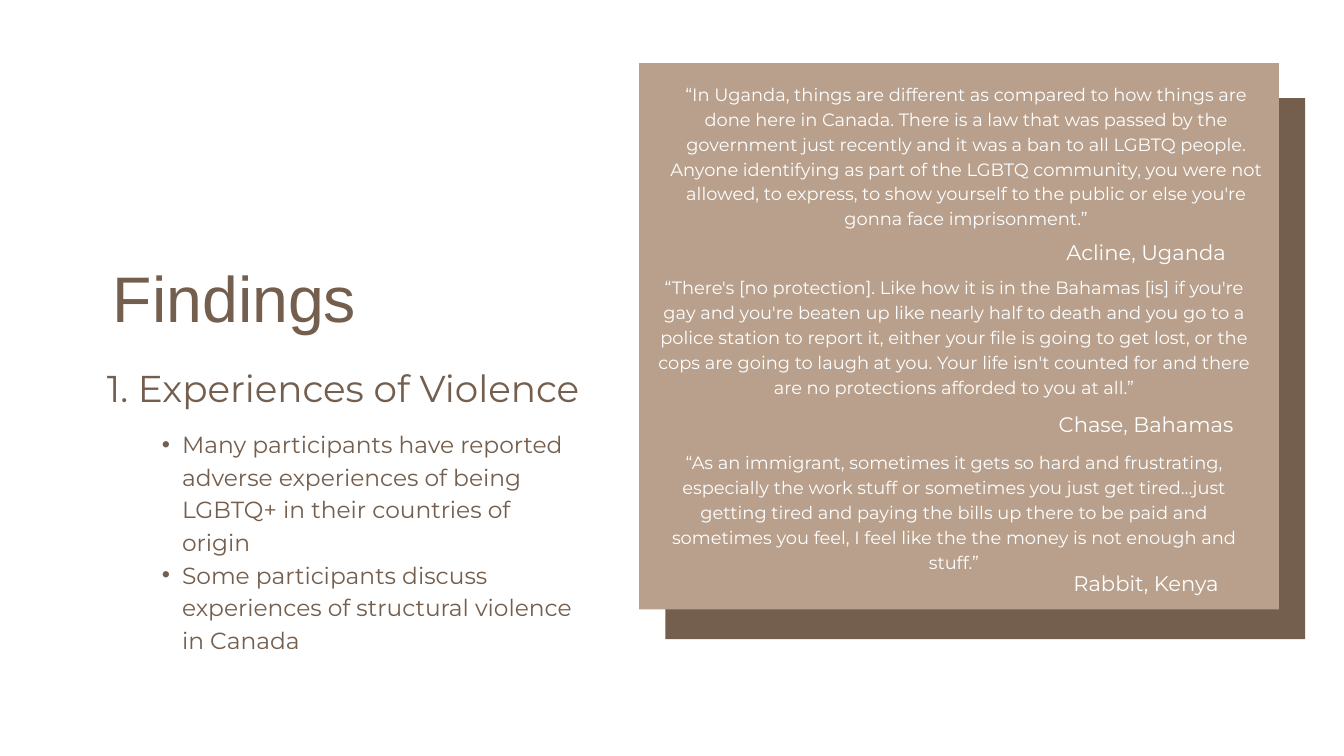
import pptx
import pptx.dml.color
import pptx.enum.shapes
import pptx.enum.text
import pptx.oxml
import pptx.oxml.ns
import pptx.util
from pptx.util import Inches

BROWN = "745E4D"
TAN = "B8A08C"
WHITE = "FFFFFF"
LEFT = pptx.enum.text.PP_ALIGN.LEFT
CENTER = pptx.enum.text.PP_ALIGN.CENTER

FINDINGS = [
    "Many participants have reported adverse experiences of being LGBTQ+ in their countries of origin",
    "Some participants discuss experiences of structural violence in Canada",
]

# Quote left, top and height, quote, speaker top, speaker
QUOTES = [
    (9.87, 1.19, 2.17,
     "“In Uganda, things are different as compared to how things are done here in Canada. "
     "There is a law that was passed by the government just recently and it was a ban to all "
     "LGBTQ people. Anyone identifying as part of the LGBTQ community, you were not allowed, "
     "to express, to show yourself to the public or else you're gonna face imprisonment.”",
     3.5, "Acline, Uganda"),
    (9.69, 4.07, 1.81,
     "“There's [no protection]. Like how it is in the Bahamas [is] if you're gay and you're "
     "beaten up like nearly half to death and you go to a police station to report it, either "
     "your file is going to get lost, or the cops are going to laugh at you. Your life isn't "
     "counted for and there are no protections afforded to you at all.”",
     6.06, "Chase, Bahamas"),
    (9.69, 6.67, 1.81,
     "“As an immigrant, sometimes it gets so hard and frustrating, especially the work stuff "
     "or sometimes you just get tired…just getting tired and paying the bills up there to be "
     "paid and sometimes you feel, I feel like the the money is not enough and stuff.”",
     8.43, "Rabbit, Kenya"),
]


def color(value):
    return pptx.dml.color.RGBColor.from_string(value)


def place(shape, left, top, width, height):
    shape.left, shape.top = Inches(left), Inches(top)
    shape.width, shape.height = Inches(width), Inches(height)


def format_text(shape, size, line_spacing, text_color, font="Montserrat", alignment=LEFT):
    """Remove the margins and give every paragraph the same look."""
    frame = shape.text_frame
    frame.word_wrap = True
    frame.auto_size = pptx.enum.text.MSO_AUTO_SIZE.NONE
    frame.vertical_anchor = pptx.enum.text.MSO_ANCHOR.TOP
    frame.margin_left = frame.margin_top = frame.margin_right = frame.margin_bottom = 0
    for paragraph in frame.paragraphs:
        paragraph.alignment = alignment
        paragraph.line_spacing = pptx.util.Pt(line_spacing)
        for run in paragraph.runs:
            run.font.size = pptx.util.Pt(size)
            run.font.name = font
            run.font.color.rgb = color(text_color)


def add_text(slide, box, text, size, line_spacing, text_color, alignment=LEFT):
    shape = slide.shapes.add_textbox(*map(Inches, box))
    shape.text_frame.text = text
    format_text(shape, size, line_spacing, text_color, alignment=alignment)
    return shape


def indent(shape, margin, first_line=0, bullet=None):
    """Set a second-level indent, with a bullet if one is given."""
    for paragraph in shape.text_frame.paragraphs:
        paragraph.level = 1
        properties = paragraph._p.get_or_add_pPr()
        properties.set("marL", str(Inches(margin)))
        properties.set("indent", str(Inches(first_line)))
        if bullet:
            for tag, name, value in (("a:buFont", "typeface", "Arial"), ("a:buChar", "char", bullet)):
                element = pptx.oxml.xmlchemy.OxmlElement(tag)
                element.set(name, value)
                properties.append(element)


def add_panel(slide, box, fill):
    shape = slide.shapes.add_shape(pptx.enum.shapes.MSO_SHAPE.RECTANGLE, *map(Inches, box))
    shape.shadow.inherit = False
    shape.fill.solid()
    shape.fill.fore_color.rgb = color(fill)
    shape.line.fill.background()


def main():
    presentation = pptx.Presentation()
    presentation.slide_width = Inches(20)
    presentation.slide_height = Inches(11.25)
    slide = presentation.slides.add_slide(presentation.slide_layouts[5])

    # Title
    title = slide.shapes.title
    place(title, 1.68, 3.65, 3.96, 1.29)
    title.text_frame.text = "Findings"
    format_text(title, 69, 96.6, BROWN, font="Arial")

    # Theme and findings
    heading = add_text(slide, (1.12, 5.33, 8.88, 0.74), "1. Experiences of Violence", 40, 56, BROWN)
    indent(heading, 0.47)
    findings = add_text(slide, (2.12, 6.33, 6.57, 3.33), "\n".join(FINDINGS), 25, 35, BROWN)
    indent(findings, 0.59, -0.3, "•")

    # Quote panel on its offset backing
    add_panel(slide, (9.9, 1.46, 9.52, 8.05), BROWN)
    add_panel(slide, (9.51, 0.94, 9.52, 8.13), TAN)

    # Quotes and speakers
    for left, top, height, quote, speaker_top, speaker in QUOTES:
        add_text(slide, (left, top, 9.01, height), quote, 19.1, 26.7, WHITE, CENTER)
        add_text(slide, (13.35, speaker_top, 7.41, 0.42), speaker, 22.6, 31.6, WHITE, CENTER)

    presentation.save("out.pptx")


if __name__ == "__main__":
    main()
